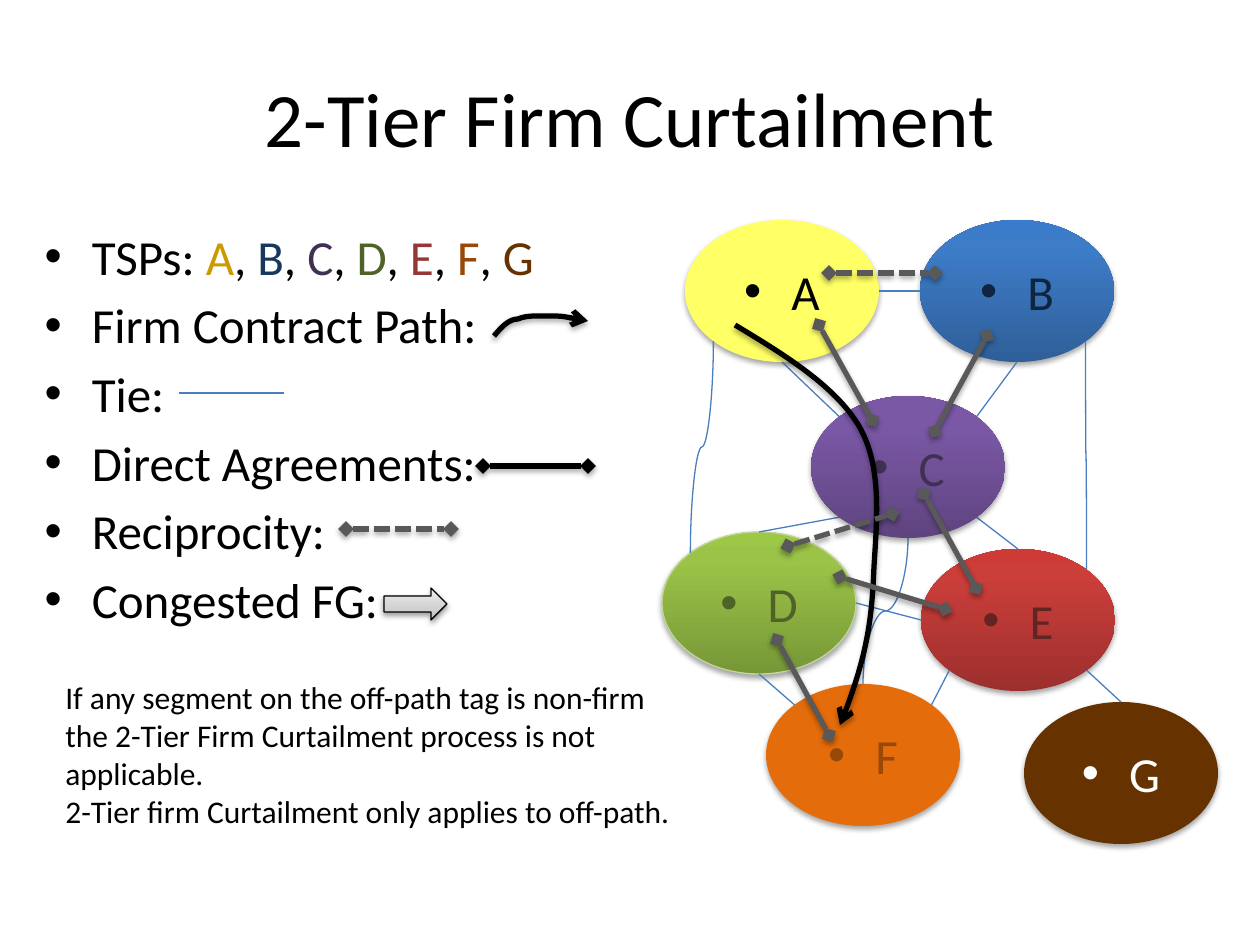
from copy import deepcopy

from lxml import etree
from pptx import Presentation
from pptx.dml.color import RGBColor
from pptx.enum.dml import MSO_LINE
from pptx.enum.shapes import MSO_CONNECTOR, MSO_SHAPE
from pptx.enum.text import MSO_ANCHOR, PP_ALIGN
from pptx.oxml.ns import qn
from pptx.util import Emu, Pt

OVAL, ARROW = MSO_SHAPE.OVAL, MSO_SHAPE.RIGHT_ARROW
STRAIGHT, CURVE = MSO_CONNECTOR.STRAIGHT, MSO_CONNECTOR.CURVE
LEFT, CENTER = PP_ALIGN.LEFT, PP_ALIGN.CENTER
MIDDLE, DASH = MSO_ANCHOR.MIDDLE, MSO_LINE.SQUARE_DOT

SCALE = 914400 / 126
FONT = "Calibri"
BLACK, GRAY, TIE = "000000", "595959", "4B7EBC"
OVAL_W, OVAL_H = 194, 142
DIAG = 0.3536

TSP_COLORS = {"A": "CC9900", "B": "17375E", "C": "403152", "D": "4F6228",
              "E": "953735", "F": "984807", "G": "663300"}
LEGEND_LABELS = ["Firm Contract Path:", "Tie:", "Direct Agreements:",
                 "Reciprocity:", "Congested FG:"]
LEGEND_PATH = [(462, 116), (468, 109), (476, 99), (486, 99), (495, 95),
               (507, 96), (519, 96), (531, 96), (540, 98), (556, 101)]
NOTES = ["If any segment on the off-path tag is non-firm the 2-Tier Firm "
         "Curtailment process is not applicable.",
         "2-Tier firm Curtailment only applies to off-path."]

# name: left, top, letter colour, fill stops
TSPS = {
    "A": (23, 0, "000000", [(0, "FFFF66")]),
    "B": (258, 0, "0F243E", [(0, "2F5F99"), (0.8, "3D7CC7"), (1, "3A7CCB")]),
    "D": (0, 312, "4F6228", [(0, "779737"), (0.8, "9BC348"), (1, "9DC746")]),
    "F": (104, 464, "984807", [(0, "E46C0A")]),
    "E": (259, 329, "632523", [(0, "9C2F2D"), (0.8, "CB3E3A"), (1, "CE3B37")]),
    "G": (362, 482, "FFFFFF", [(0, "663300")]),
    "C": (149, 176, "403152", [(0, "5F4480"), (0.8, "7B58A6"), (1, "7C57A8")]),
}
SITES = {"t": (0, -0.5), "b": (0, 0.5), "l": (-0.5, 0), "r": (0.5, 0),
         "tl": (-DIAG, -DIAG), "tr": (DIAG, -DIAG),
         "bl": (-DIAG, DIAG), "br": (DIAG, DIAG)}
TIES = ["C bl D t", "C br E t", "D r E l", "D b F tl", "F tr E bl",
        "E br G t", "A b C tl", "B b C tr", "A r B l"]
CURVED_TIES = ["A bl D tl", "B br E tr", "C b F t"]
AGREEMENTS = [(262, 274, 314, 368), (115, 420, 167, 515), (157, 105, 210, 200),
              (325, 116, 273, 211), (178, 357, 283, 389)]
RECIPROCITIES = [(167, 53, 273, 53), (126, 326, 230, 294)]
CONTRACT_PATH = [(73, 105), (123, 135), (173, 166), (197, 206), (220, 246),
                 (215, 298), (212, 347), (210, 397), (205, 438), (178, 505)]


def px(*values):
    """Turn px lengths into a list of EMU lengths."""
    return [Emu(round(v * SCALE)) for v in values]


def rgb(color):
    """Return the colour of a hex string."""
    return RGBColor.from_string(color)


def add_xml(parent, tag, **attrs):
    """Append a child element with the given attributes."""
    child = etree.SubElement(parent, qn(tag))
    for key, value in attrs.items():
        child.set(key, str(value))
    return child


def text(tf, paragraphs, size=28, color=BLACK, align=LEFT, bullet=False):
    """Fill a text frame with paragraphs made of (text, colour) runs."""
    tf.word_wrap = True
    for i, runs in enumerate(paragraphs):
        p = tf.add_paragraph() if i else tf.paragraphs[0]
        p.alignment = align
        if bullet:
            pPr = p._p.get_or_add_pPr()
            pPr.set("marL", "342900")
            pPr.set("indent", "-342900")
            add_xml(pPr, "a:buFont", typeface="Arial")
            add_xml(pPr, "a:buChar", char="•")
        for words, run_color in [(runs, color)] if isinstance(runs, str) else runs:
            r = p.add_run()
            r.text = words
            r.font.name, r.font.size = FONT, Pt(size)
            r.font.color.rgb = rgb(run_color)


def effects(sp, alpha=35):
    """Give a shape a soft shadow below it, or none when alpha is 0."""
    effect = add_xml(sp._element.spPr, "a:effectLst")
    if alpha:
        shadow = add_xml(effect, "a:outerShdw", blurRad=40000, dist=23000,
                         dir=5400000, rotWithShape=0)
        color = add_xml(shadow, "a:srgbClr", val=BLACK)
        add_xml(color, "a:alpha", val=alpha * 1000)


def stroke(sp, color, width, dash=None, head=None, tail=None):
    """Format a line with its dash and arrowheads."""
    sp.line.color.rgb = rgb(color)
    sp.line.width = Pt(width)
    if dash:
        sp.line.dash_style = dash
    ln = sp._element.spPr.find(qn("a:ln"))
    for tag, kind in (("a:headEnd", head), ("a:tailEnd", tail)):
        if kind:
            add_xml(ln, tag, type=kind)


def paint(sp, stops):
    """Fill a shape with one colour or an upward gradient."""
    if len(stops) == 1:
        sp.fill.solid()
        sp.fill.fore_color.rgb = rgb(stops[0][1])
        return
    sp.fill.gradient()
    sp.fill.gradient_angle = 90
    gs_list = sp._element.spPr.find(".//" + qn("a:gsLst"))
    gs_list.append(deepcopy(gs_list[-1]))
    for stop, (position, color) in zip(sp.fill.gradient_stops, stops):
        stop.position = position
        stop.color.rgb = rgb(color)


def tie(shapes, x1, y1, x2, y2, curved=False):
    """Draw a thin tie line, straight or as a downward S curve."""
    if curved:
        cx, cy, half, rise = (x1 + x2) / 2, (y1 + y2) / 2, (y2 - y1) / 2, (x1 - x2) / 2
        x1, y1, x2, y2 = cx - half, cy - rise, cx + half, cy + rise
    sp = shapes.add_connector(CURVE if curved else STRAIGHT, *px(x1, y1, x2, y2))
    if curved:
        sp._element.spPr.find(qn("a:xfrm")).set("rot", "5400000")
    stroke(sp, TIE, 0.75)
    effects(sp, 0)


def agreement(shapes, x1, y1, x2, y2, color=GRAY, dash=None):
    """Draw a thick line with a diamond at each end."""
    sp = shapes.add_connector(STRAIGHT, *px(x1, y1, x2, y2))
    stroke(sp, color, 3, dash, "diamond", "diamond")
    effects(sp)


def contract_path(shapes, x, y, points):
    """Draw a curved arrow through Bezier control points."""
    points = [(x + dx, y + dy) for dx, dy in points]
    builder = shapes.build_freeform(*points[0], scale=SCALE)
    builder.add_line_segments(points[1:], close=False)
    sp = builder.convert_to_shape()
    route = sp._element.spPr.find(".//" + qn("a:path"))
    lines = route.findall(qn("a:lnTo"))
    for trio in zip(lines[::3], lines[1::3], lines[2::3]):
        curve = add_xml(route, "a:cubicBezTo")
        for line in trio:
            curve.append(line[0])
            route.remove(line)
    sp.fill.background()
    stroke(sp, BLACK, 3, tail="arrow")
    effects(sp)


def tsp(shapes, x, y, name):
    """Draw one provider's oval with its letter."""
    left, top, color, stops = TSPS[name]
    sp = shapes.add_shape(OVAL, *px(x + left, y + top, OVAL_W, OVAL_H))
    paint(sp, stops)
    if name == "D":
        stroke(sp, "C3D69B", 0.75)
    else:
        sp.line.fill.background()
    effects(sp)
    sp.text_frame.vertical_anchor = MIDDLE
    text(sp.text_frame, [name], color=color, align=CENTER, bullet=True)


def site(x, y, name, side):
    """Return the point on the side of a provider's oval."""
    left, top = TSPS[name][:2]
    dx, dy = SITES[side]
    return x + left + OVAL_W * (0.5 + dx), y + top + OVAL_H * (0.5 + dy)


def network(s, x, y):
    """Draw the providers, their ties, the contract path and agreements."""
    group = s.shapes.add_group_shape().shapes
    *behind, front = TSPS
    for name in behind:
        tsp(group, x, y, name)
    for ends in TIES + CURVED_TIES:
        a, side_a, b, side_b = ends.split()
        tie(group, *site(x, y, a, side_a), *site(x, y, b, side_b),
            curved=ends in CURVED_TIES)
    tsp(group, x, y, front)
    contract_path(s.shapes, x, y, CONTRACT_PATH)
    for lines, dash in ((AGREEMENTS, None), (RECIPROCITIES, DASH)):
        for x1, y1, x2, y2 in lines:
            agreement(s.shapes, x + x1, y + y1, x + x2, y + y2, dash=dash)


def legend(s, x, y, w, h):
    """Fill the body list and draw a sample beside each label."""
    body = s.placeholders[1]
    body.left, body.top, body.width, body.height = px(x, y, w, h)
    names = [("TSPs: ", BLACK)]
    for name, color in TSP_COLORS.items():
        names += [(name, color), (", ", BLACK)]
    text(body.text_frame, [names[:-1]] + LEGEND_LABELS, bullet=True)
    contract_path(s.shapes, x, y, LEGEND_PATH)
    tie(s.shapes, x + 147, y + 173, x + 252, y + 173)
    agreement(s.shapes, x + 451, y + 246, x + 556, y + 246, BLACK)
    agreement(s.shapes, x + 314, y + 309, x + 419, y + 309, dash=DASH)
    sp = s.shapes.add_shape(ARROW, *px(x + 352, y + 368, 63, 32))
    paint(sp, [(0, "BDBDBD"), (0.35, "D1D1D1"), (1, "EEEEEE")])
    stroke(sp, BLACK, 0.75)
    effects(sp, 38)


def title(s, x, y, w, h):
    """Place the slide title."""
    sp = s.shapes.title
    sp.left, sp.top, sp.width, sp.height = px(x, y, w, h)
    sp.text_frame.vertical_anchor = MIDDLE
    text(sp.text_frame, ["2-Tier Firm Curtailment"], size=44, align=CENTER)


def notes(s, x, y, w, h):
    """Place the remarks under the legend."""
    text(s.shapes.add_textbox(*px(x, y, w, h)).text_frame, NOTES, size=18)


def main():
    """Build the slide and save it."""
    prs = Presentation()
    prs.slide_width, prs.slide_height = px(1260, 945)
    s = prs.slides.add_slide(prs.slide_layouts[1])
    title(s, 63, 38, 1134, 158)
    legend(s, 32, 220, 557, 624)
    network(s, 662, 220)
    notes(s, 53, 672, 640, 165)
    prs.save("out.pptx")


if __name__ == "__main__":
    main()
